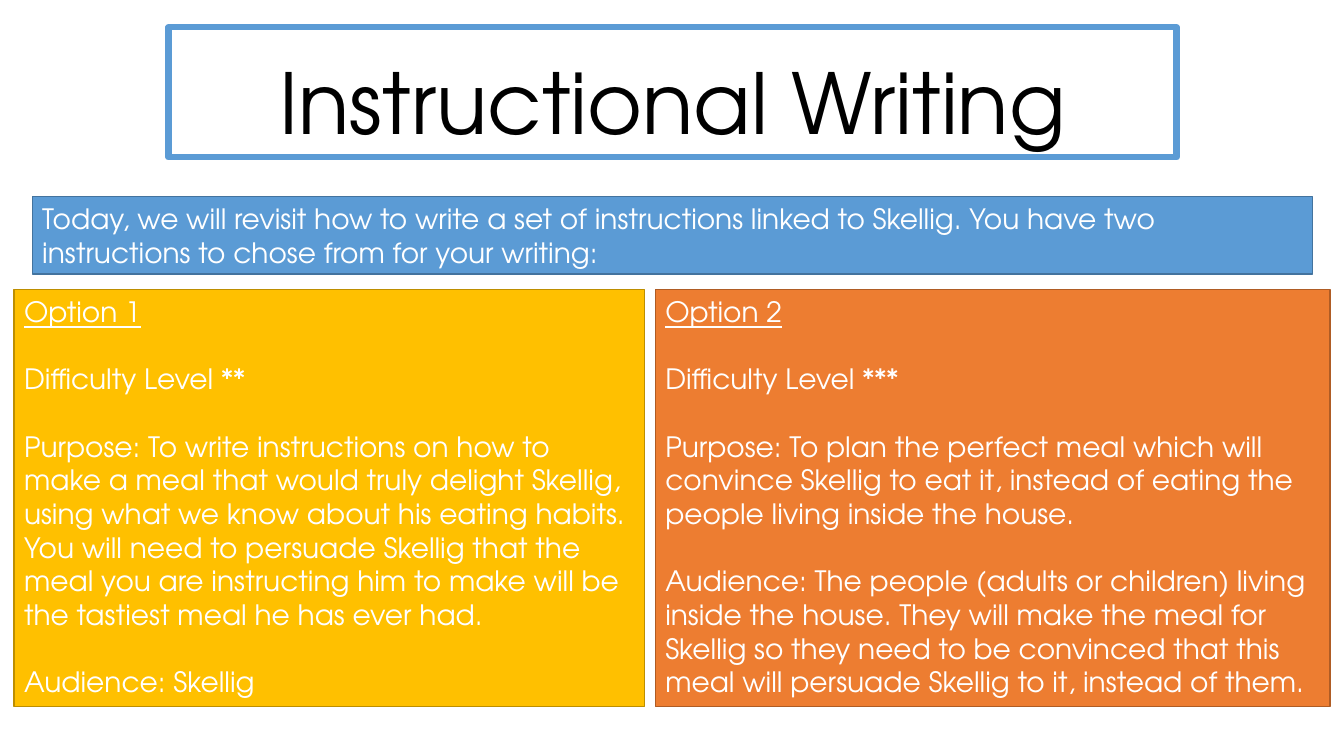
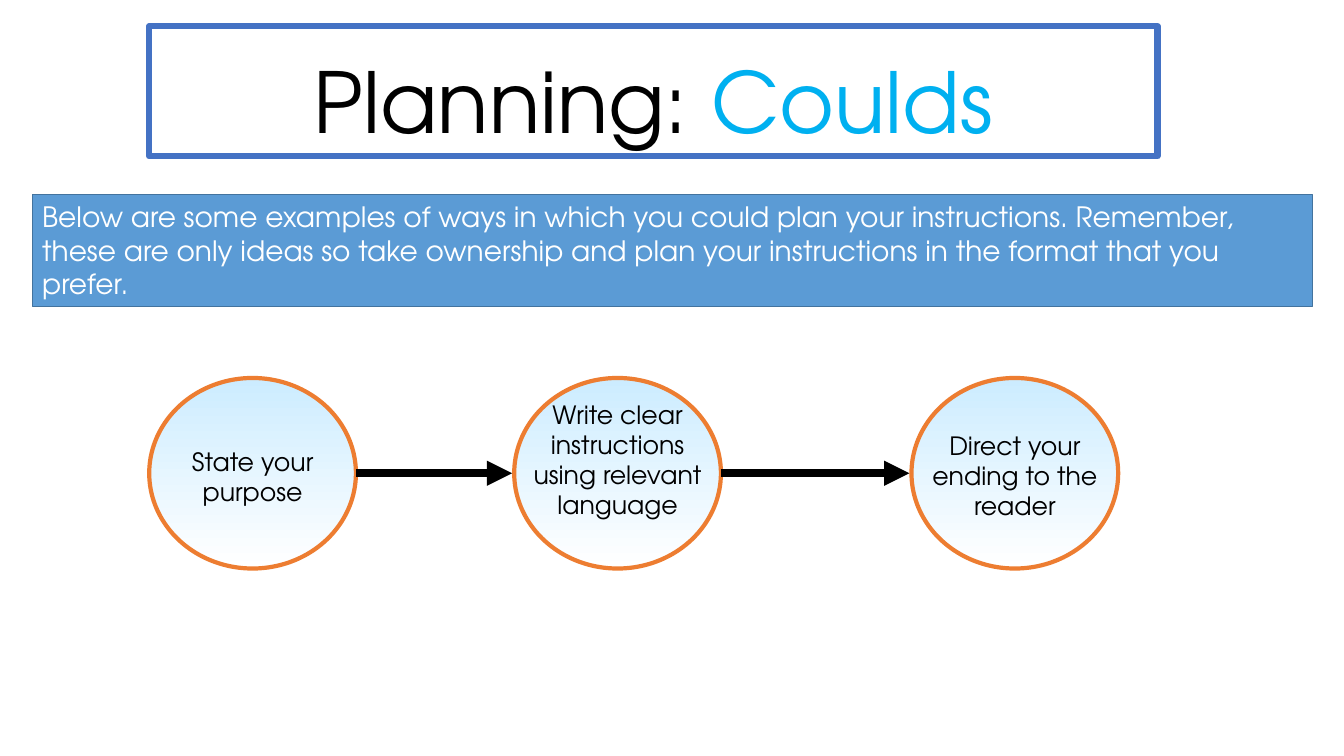
from dataclasses import dataclass

import lxml.etree
import pptx
import pptx.dml.color
import pptx.enum.shapes
import pptx.enum.text
import pptx.oxml.ns
import pptx.util

Inches = pptx.util.Inches
Pt = pptx.util.Pt
MSO_SHAPE = pptx.enum.shapes.MSO_SHAPE
PP_ALIGN = pptx.enum.text.PP_ALIGN
MSO_ANCHOR = pptx.enum.text.MSO_ANCHOR

FONT = "TeX Gyre Adventor"
WHITE, BLACK = "FFFFFF", "000000"
BLUE, DARK_BLUE, ROYAL_BLUE, SKY_BLUE = "5B9BD5", "43739E", "4472C4", "00B0F0"
GOLD, DARK_GOLD = "FFC000", "BD8E00"
ORANGE, DARK_ORANGE = "ED7D31", "AF5C24"
PALE_BLUE = "CCECFF"

MARGIN, BANNER_W = 0.32, 12.7
TITLE_W, TITLE_H = 10, 1.29
OPTION_TOP, OPTION_H = 2.87, 4.14
STEP_TOP, STEP_W, STEP_H = 3.75, 2.05, 1.89
LABEL_INSET = 0.08
ARROW_GAP = 0.02


@dataclass
class Option:
    left: float
    width: float
    fill: str
    line: str
    lines: list[str]


@dataclass
class Step:
    left: float
    label_top: float
    label_height: float
    label: str


OPTIONS = [
    Option(0.14, 6.25, GOLD, DARK_GOLD, [
        "Option 1",
        "Difficulty Level **",
        "Purpose: To write instructions on how to make a meal that would truly "
        "delight Skellig, using what we know about his eating habits. You will "
        "need to persuade Skellig that the meal you are instructing him to make "
        "will be the tastiest meal he has ever had.",
        "Audience: Skellig",
    ]),
    Option(6.5, 6.69, ORANGE, DARK_ORANGE, [
        "Option 2",
        "Difficulty Level ***",
        "Purpose: To plan the perfect meal which will convince Skellig to eat it, "
        "instead of eating the people living inside the house.",
        "Audience: The people (adults or children) living inside the house. They "
        "will make the meal for Skellig so they need to be convinced that this "
        "meal will persuade Skellig to it, instead of them.",
    ]),
]

STEPS = [
    Step(1.48, 4.38, 0.7, "State your purpose"),
    Step(5.1, 3.91, 1.6, "Write clear instructions using relevant language"),
    Step(9.04, 4.22, 1, "Direct your ending to the reader"),
]


def rgb(color: str) -> pptx.dml.color.RGBColor:
    return pptx.dml.color.RGBColor.from_string(color)


def style_run(r, size: float, color: str) -> None:
    r.font.name = FONT
    r.font.size = Pt(size)
    r.font.color.rgb = rgb(color)


def write(sp, lines: list[str], size: float, color: str,
          align=PP_ALIGN.LEFT, anchor=MSO_ANCHOR.TOP, gap: float = 0):
    tf = sp.text_frame
    tf.word_wrap = True
    tf.vertical_anchor = anchor
    tf.text = "\n".join(lines)
    for i, p in enumerate(tf.paragraphs):
        p.alignment = align
        p.space_before = Pt(gap if i else 0)
        for r in p.runs:
            style_run(r, size, color)
    return tf


def add_box(s, left: float, top: float, width: float, height: float,
            line: str, line_width: float, fill: str = WHITE, shape=MSO_SHAPE.RECTANGLE):
    sp = s.shapes.add_shape(shape, Inches(left), Inches(top), Inches(width), Inches(height))
    sp.shadow.inherit = False
    sp.fill.solid()
    sp.fill.fore_color.rgb = rgb(fill)
    sp.line.color.rgb = rgb(line)
    sp.line.width = Pt(line_width)
    return sp


def add_title(s, left: float, top: float, line: str, text: str, accent: str = "") -> None:
    sp = add_box(s, left, top, TITLE_W, TITLE_H, line, 4.5)
    tf = write(sp, [text], 60, BLACK, PP_ALIGN.CENTER, MSO_ANCHOR.BOTTOM)
    p = tf.paragraphs[0]
    p.line_spacing = 0.9
    if accent:
        r = p.add_run()
        r.text = accent
        style_run(r, 60, SKY_BLUE)


def add_banner(s, top: float, height: float, text: str) -> None:
    sp = add_box(s, MARGIN, top, BANNER_W, height, DARK_BLUE, 1, BLUE)
    write(sp, [text], 20, WHITE)


def add_option(s, option: Option) -> None:
    sp = add_box(s, option.left, OPTION_TOP, option.width, OPTION_H,
                 option.line, 1, option.fill)
    tf = write(sp, option.lines, 20, WHITE, gap=24.2)
    tf.paragraphs[0].runs[0].font.underline = True


def add_step(s, step: Step) -> None:
    sp = add_box(s, step.left, STEP_TOP, STEP_W, STEP_H, ORANGE, 3, shape=MSO_SHAPE.OVAL)
    sp.fill.gradient()
    sp.fill.gradient_angle = 270
    for stop, color in zip(sp.fill.gradient_stops, (PALE_BLUE, WHITE)):
        stop.color.rgb = rgb(color)
    label = s.shapes.add_textbox(
        Inches(step.left + LABEL_INSET), Inches(step.label_top),
        Inches(STEP_W - 2 * LABEL_INSET), Inches(step.label_height))
    write(label, [step.label], 18, BLACK, PP_ALIGN.CENTER)


def add_arrow(s, start: Step, end: Step) -> None:
    y = Inches(STEP_TOP + STEP_H / 2)
    arrow = s.shapes.add_connector(
        pptx.enum.shapes.MSO_CONNECTOR.STRAIGHT,
        Inches(start.left + STEP_W), y, Inches(end.left - ARROW_GAP), y)
    arrow.line.color.rgb = rgb(BLACK)
    arrow.line.width = Pt(6)
    qn = pptx.oxml.ns.qn
    ln = arrow.line._get_or_add_ln()
    lxml.etree.SubElement(ln, qn("a:tailEnd"), type="triangle")
    lxml.etree.SubElement(arrow._element.spPr, qn("a:effectLst"))


def build_options(s) -> None:
    add_banner(s, 1.95, 0.77,
               "Today, we will revisit how to write a set of instructions linked to "
               "Skellig. You have two instructions to chose from for your writing:")
    add_title(s, 1.67, 0.27, BLUE, "Instructional Writing")
    for option in OPTIONS:
        add_option(s, option)


def build_planning(s) -> None:
    add_banner(s, 1.93, 1.11,
               "Below are some examples of ways in which you could plan your "
               "instructions. Remember, these are only ideas so take ownership and "
               "plan your instructions in the format that you prefer.")
    add_title(s, 1.48, 0.26, ROYAL_BLUE, "Planning: ", "Coulds")
    for step in STEPS:
        add_step(s, step)
    for start, end in zip(STEPS, STEPS[1:]):
        add_arrow(s, start, end)


def main() -> None:
    prs = pptx.Presentation()
    prs.slide_width = Inches(13.33)
    prs.slide_height = Inches(7.5)
    blank = prs.slide_layouts[6]
    for build in (build_options, build_planning):
        build(prs.slides.add_slide(blank))
    prs.save("out.pptx")


if __name__ == "__main__":
    main()
